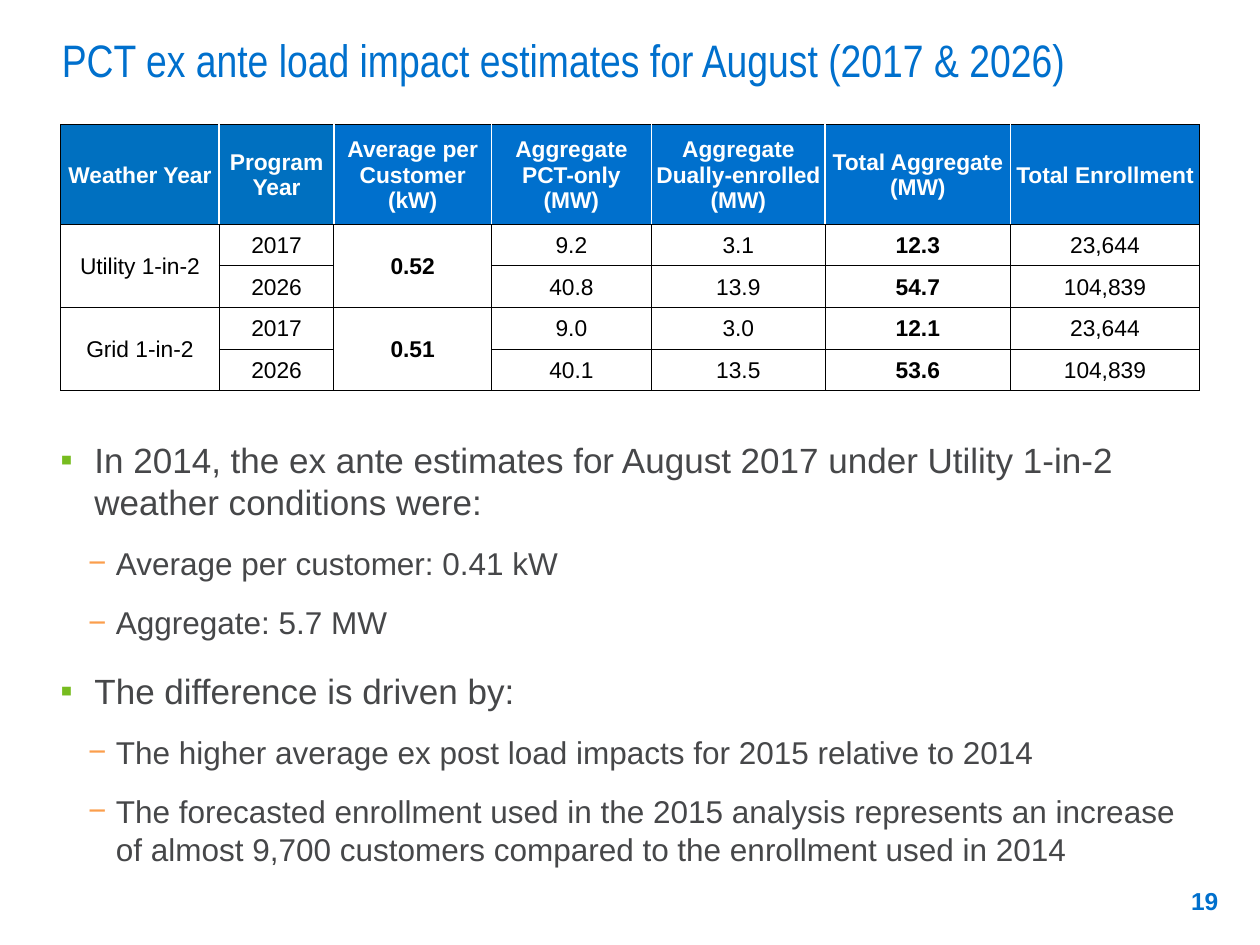
from lxml import etree
from pptx import Presentation
from pptx.dml.color import RGBColor
from pptx.enum.text import MSO_ANCHOR, PP_ALIGN
from pptx.oxml.ns import qn
from pptx.util import Inches, Pt

MIDDLE, BOTTOM = MSO_ANCHOR.MIDDLE, MSO_ANCHOR.BOTTOM
LEFT, CENTER, RIGHT = PP_ALIGN.LEFT, PP_ALIGN.CENTER, PP_ALIGN.RIGHT
COLORS = {"blue": "0070CD", "dark_blue": "0070C0", "white": "FFFFFF", "black": "000000",
          "gray": "464749", "green": "77BC1F", "orange": "FB9E4C"}


def style(p, size, color, bold=False, align=LEFT, name="Arial"):
    p.alignment = align
    for r in p.runs:
        r.font.name = name
        r.font.size = Pt(size)
        r.font.bold = bold
        r.font.color.rgb = RGBColor.from_string(COLORS[color])


def add_box(left, top, width, height, margins, anchor=MSO_ANCHOR.TOP):
    sp = s.shapes.add_textbox(Inches(left), Inches(top), Inches(width), Inches(height))
    tf = sp.text_frame
    tf.word_wrap = True
    tf.vertical_anchor = anchor
    tf.margin_left, tf.margin_top, tf.margin_right, tf.margin_bottom = map(Inches, margins)
    return tf


prs = Presentation()
prs.slide_width, prs.slide_height = Inches(10), Inches(7.5)
s = prs.slides.add_slide(prs.slide_layouts[6])

tf = add_box(0.49, 0, 9.01, 0.74, (0, 0.05, 0.1, 0.05), BOTTOM)
tf.text = "PCT ex ante load impact estimates for August (2017 & 2026)"
style(tf.paragraphs[0], 26, "blue", name="Arial Narrow")

tf = add_box(9.06, 6.95, 0.7, 0.4, (0.09, 0.04, 0.09, 0.04), MIDDLE)
tf.text = "19"
style(tf.paragraphs[0], 14, "blue", True, RIGHT)

rows = [
    ["Weather Year", "Program Year", "Average per Customer (kW)", "Aggregate PCT-only (MW)",
     "Aggregate Dually-enrolled (MW)", "Total Aggregate (MW)", "Total Enrollment"],
    ["Utility 1-in-2", "2017", "0.52", "9.2", "3.1", "12.3", "23,644"],
    ["", "2026", "", "40.8", "13.9", "54.7", "104,839"],
    ["Grid 1-in-2", "2017", "0.51", "9.0", "3.0", "12.1", "23,644"],
    ["", "2026", "", "40.1", "13.5", "53.6", "104,839"],
]
widths = [1.26, 0.91, 1.25, 1.27, 1.38, 1.47, 1.5]
heights = [0.79] + [0.33] * 4
bold_columns = (2, 5)
last = len(widths) - 1

table = s.shapes.add_table(len(rows), len(widths), Inches(0.48), Inches(0.99),
                           Inches(sum(widths)), Inches(sum(heights))).table
for col, width in zip(table.columns, widths):
    col.width = Inches(width)
for row, height in zip(table.rows, heights):
    row.height = Inches(height)

for i, values in enumerate(rows):
    for j, value in enumerate(values):
        cell = table.cell(i, j)
        header = i == 0
        cell.vertical_anchor = MIDDLE
        cell.margin_left = cell.margin_top = cell.margin_right = Inches(0.01)
        cell.margin_bottom = 0
        cell.text = value
        style(cell.text_frame.paragraphs[0], 13, "white" if header else "black",
              header or j in bold_columns, CENTER)
        white_sides = {"L": header and j > 0, "R": header and j < last}
        for side in "LRTB":
            white = white_sides.get(side, False)
            ln = etree.SubElement(cell._tc.get_or_add_tcPr(), qn("a:ln" + side),
                                  w=str(Pt(1 if white else 0.5)))
            fill = etree.SubElement(ln, qn("a:solidFill"))
            etree.SubElement(fill, qn("a:srgbClr"), val=COLORS["white" if white else "black"])
        if header:
            cell.fill.solid()
            cell.fill.fore_color.rgb = RGBColor.from_string(
                COLORS["dark_blue" if j < 2 else "blue"])
        else:
            cell.fill.background()

for i in (1, 3):
    for j in (0, 2):
        table.cell(i, j).merge(table.cell(i + 1, j))

bullets = [
    (0, "In 2014, the ex ante estimates for August 2017 under Utility 1-in-2 weather conditions were:"),
    (1, "Average per customer: 0.41 kW"),
    (1, "Aggregate: 5.7 MW"),
    (0, "The difference is driven by:"),
    (1, "The higher average ex post load impacts for 2015 relative to 2014"),
    (1, "The forecasted enrollment used in the 2015 analysis represents an increase of almost "
        "9,700 customers compared to the enrollment used in 2014"),
]
levels = [
    {"size": 20, "margin": 0.27, "hang": 0.27, "before": 4, "char": "▪", "color": "green"},
    {"size": 18, "margin": 0.44, "hang": 0.22, "before": 0.3, "char": "−", "color": "orange"},
]
tf = add_box(0.48, 3.43, 9.04, 3.14, (0, 0.05, 0.1, 0.05))
for n, (level, text) in enumerate(bullets):
    look = levels[level]
    p = tf.paragraphs[0] if n == 0 else tf.add_paragraph()
    p.text = text
    p.level = level
    p.space_before = Pt(look["before"] if n else 0)
    p.space_after = Pt(12)
    pPr = p._p.get_or_add_pPr()
    pPr.set("marL", str(Inches(look["margin"])))
    pPr.set("indent", str(-Inches(look["hang"])))
    color = etree.SubElement(pPr, qn("a:buClr"))
    etree.SubElement(color, qn("a:srgbClr"), val=COLORS[look["color"]])
    etree.SubElement(pPr, qn("a:buFont"), typeface="Arial")
    etree.SubElement(pPr, qn("a:buChar"), char=look["char"])
    style(p, look["size"], "gray")

prs.save("out.pptx")
